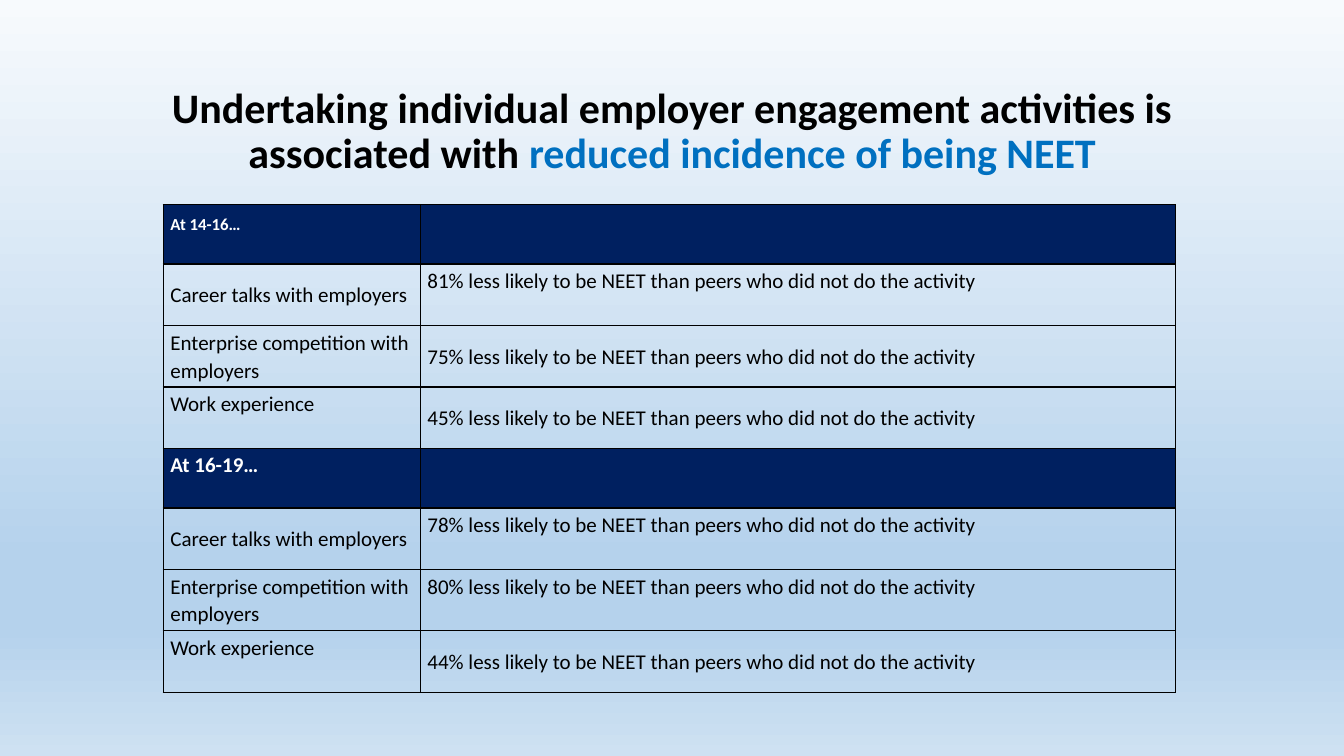
"""Build a slide on employer engagement activities and reduced NEET incidence."""
from dataclasses import dataclass

from pptx import Presentation
from pptx.dml.color import RGBColor
from pptx.enum.text import MSO_ANCHOR, PP_ALIGN
from pptx.oxml import parse_xml
from pptx.oxml.ns import nsdecls
from pptx.slide import Slide
from pptx.table import _Cell
from pptx.util import Emu, Pt

PX = 9144
FONT = "Calibri"
TOP, MIDDLE = MSO_ANCHOR.TOP, MSO_ANCHOR.MIDDLE
CENTER = PP_ALIGN.CENTER
COLORS = {
    "black": "000000", "white": "FFFFFF", "navy": "002060", "blue": "0070C0",
    "bg_top": "F7FAFD", "bg_deep": "B5D2EC", "bg_end": "CEE1F2",
}
BG_STOPS = [(0, "bg_top"), (74, "bg_deep"), (83, "bg_deep"), (100, "bg_end")]
COL_WIDTHS = (255, 749)
HEAD_H, BODY_H = 59, 61
CELL_PAD = 7


@dataclass(frozen=True)
class Entry:
    """Text of one cell; a top inset of None centres it vertically."""
    text: str
    inset: int | None = None
    size: int = 15


@dataclass(frozen=True)
class Row:
    """One table row with its two cells."""
    label: Entry
    finding: Entry
    header: bool = False


def finding(percent: int, inset: int | None = None) -> Entry:
    """Return the sentence for one percentage."""
    return Entry(f"{percent}% less likely to be NEET than peers who did not do the activity", inset)


TALKS = Entry("Career talks with employers")
ENTERPRISE = Entry("Enterprise competition with employers")
WORK = Entry("Work experience", 3)
ROWS = [
    Row(Entry("At 14-16…", 8, 12), Entry(""), True),
    Row(TALKS, finding(81, 3)),
    Row(ENTERPRISE, finding(75)),
    Row(WORK, finding(45)),
    Row(Entry("At 16-19…", 2), Entry(""), True),
    Row(TALKS, finding(78, 3)),
    Row(ENTERPRISE, finding(80, 3)),
    Row(WORK, finding(44)),
]


def px(n: int) -> Emu:
    """Convert px to EMU."""
    return Emu(n * PX)


def rgb(name: str) -> RGBColor:
    """Look up a named colour."""
    return RGBColor.from_string(COLORS[name])


def add_run(p, text: str, size: int, color: str, bold: bool) -> None:
    """Append a formatted run to a paragraph."""
    r = p.add_run()
    r.text = text
    r.font.name, r.font.size, r.font.bold = FONT, Pt(size), bold
    r.font.color.rgb = rgb(color)


def set_background(s: Slide) -> None:
    """Give the slide its vertical gradient."""
    stops = "".join(
        f'<a:gs pos="{pos * 1000}"><a:srgbClr val="{COLORS[name]}"/></a:gs>'
        for pos, name in BG_STOPS)
    s.element.cSld.insert(0, parse_xml(
        f'<p:bg {nsdecls("p", "a")}><p:bgPr><a:gradFill rotWithShape="1">'
        f'<a:gsLst>{stops}</a:gsLst><a:lin ang="5400000" scaled="0"/>'
        '</a:gradFill><a:effectLst/></p:bgPr></p:bg>'))


def add_title(s: Slide) -> None:
    """Add the two-colour title."""
    tf = s.shapes.add_textbox(px(92), px(71), px(1150), px(121)).text_frame
    tf.word_wrap, tf.vertical_anchor = True, MIDDLE
    p = tf.paragraphs[0]
    p.alignment, p.line_spacing = CENTER, 0.9
    add_run(p, "Undertaking individual employer engagement activities is associated with ",
            30, "black", True)
    add_run(p, "reduced incidence of being NEET", 30, "blue", True)


def set_borders(cell: _Cell) -> None:
    """Draw a thin black line on all four sides."""
    tcPr = cell._tc.get_or_add_tcPr()
    for i, side in enumerate("LRTB"):
        tcPr.insert(i, parse_xml(
            f'<a:ln{side} {nsdecls("a")} w="{Pt(1)}"><a:solidFill>'
            f'<a:srgbClr val="{COLORS["black"]}"/></a:solidFill></a:ln{side}>'))


def fill_cell(cell: _Cell, entry: Entry, header: bool) -> None:
    """Write and style one cell."""
    cell.margin_left = cell.margin_right = px(CELL_PAD)
    cell.margin_top, cell.margin_bottom = px(entry.inset or 0), 0
    cell.vertical_anchor = MIDDLE if entry.inset is None else TOP
    if header:
        cell.fill.solid()
        cell.fill.fore_color.rgb = rgb("navy")
    else:
        cell.fill.background()
    set_borders(cell)
    if entry.text:
        p = cell.text_frame.paragraphs[0]
        p.line_spacing = 1.07
        add_run(p, entry.text, entry.size, "white" if header else "black", header)


def add_findings(s: Slide) -> None:
    """Add the table of findings."""
    heights = [HEAD_H if row.header else BODY_H for row in ROWS]
    table = s.shapes.add_table(len(ROWS), len(COL_WIDTHS), px(162), px(203),
                               px(sum(COL_WIDTHS)), px(sum(heights))).table
    table.first_row = table.horz_banding = False
    for col, width in zip(table.columns, COL_WIDTHS):
        col.width = px(width)
    for tr, row, height in zip(table.rows, ROWS, heights):
        tr.height = px(height)
        for cell, entry in zip(tr.cells, (row.label, row.finding)):
            fill_cell(cell, entry, row.header)


def main() -> None:
    """Build and save the slide."""
    prs = Presentation()
    prs.slide_width, prs.slide_height = px(1333), px(750)
    s = prs.slides.add_slide(prs.slide_layouts[6])
    set_background(s)
    add_title(s)
    add_findings(s)
    prs.save("out.pptx")


if __name__ == "__main__":
    main()
